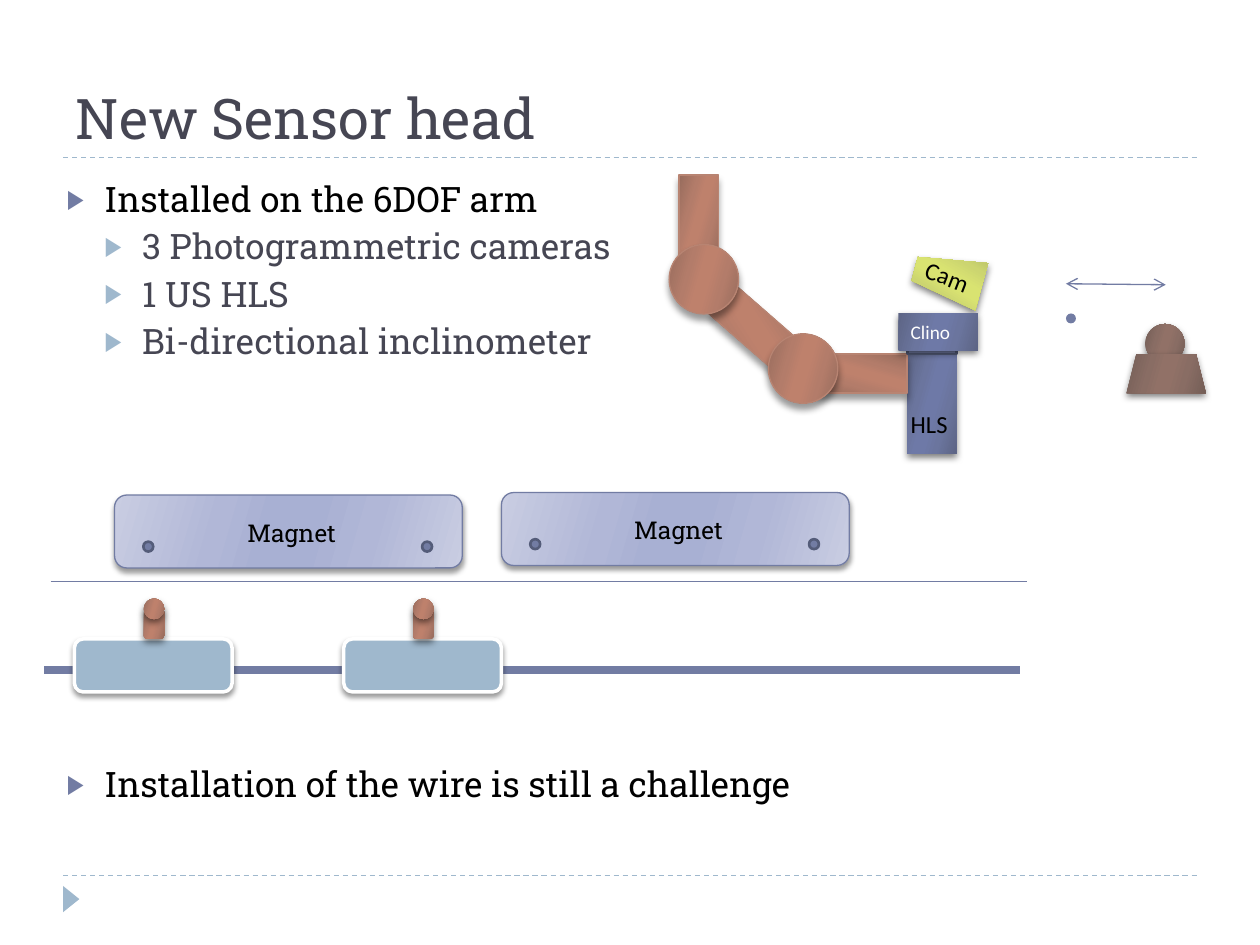
from lxml import etree
from pptx import Presentation
from pptx.dml.color import RGBColor
from pptx.enum.dml import MSO_LINE
from pptx.enum.shapes import MSO_CONNECTOR, MSO_SHAPE
from pptx.enum.text import MSO_ANCHOR, MSO_AUTO_SIZE, PP_ALIGN
from pptx.oxml.ns import qn
from pptx.util import Cm, Pt

RECT, ROUND = MSO_SHAPE.RECTANGLE, MSO_SHAPE.ROUNDED_RECTANGLE
OVAL, TRAPEZOID = MSO_SHAPE.OVAL, MSO_SHAPE.TRAPEZOID
TRIANGLE = MSO_SHAPE.ISOSCELES_TRIANGLE
STRAIGHT, DASH = MSO_CONNECTOR.STRAIGHT, MSO_LINE.DASH
LEFT, CENTER = PP_ALIGN.LEFT, PP_ALIGN.CENTER
TOP, BOTTOM, NO_FIT = MSO_ANCHOR.TOP, MSO_ANCHOR.BOTTOM, MSO_AUTO_SIZE.NONE

THEME = {
    "serif": "Roboto Slab", "sans": "Calibri",
    "title": 32, "body": 20, "label": 14, "small": 11,
    "blue": "727CA3", "navy": "545C79", "sky": "9FB8CD", "rust": "B88472",
    "ink": "464653", "black": "000000", "white": "FFFFFF",
}
GRADIENT_POSITIONS = (0, 30, 45, 55, 73, 100)
# Edge, middle and centre colours, mirrored along the gradient
GRADIENTS = {
    "magnet": ("C9CDE2", "B1B7D7", "A8B0D3"),
    "steel": ("5D6585", "6B759E", "6E79A7"),
    "copper": ("976C5D", "B37C6A", "BE816C"),
    "lime": ("ACB264", "CCD570", "D9E371"),
    "brown": ("745E57", "896D64", "917167"),
}
# Opacity in percent, blur and distance in points
SHADOWS = {"soft": (40, 3, 2), "deep": (40, 4, 3.4), "contact": (50, 4, 2)}

TITLE = "New Sensor head"
# Text, level, space before in points
BULLETS = [
    ("Installed on the 6DOF arm", 0, 6),
    ("3 Photogrammetric cameras", 1, 5),
    ("1 US HLS", 1, 5),
    ("Bi-directional inclinometer", 1, 5),
    ("Installation of the wire is still a challenge", 0, 231),
]
# Text colour, bullet colour
LEVELS = [("black", "blue"), ("ink", "sky")]

RULES = [17.65, 3.18]
# Start x, y, end x, width in points
TRACKS = [(0.89, 13.51, 20.57, 4.25), (1.02, 11.73, 20.7, 0.5)]

JOINT = {"fill": "copper", "line": ("rust", 0.75), "shadow": "deep"}
COPPER = {"fill": "copper", "shadow": "contact"}
STEEL = {"fill": "steel", "shadow": "contact"}
BROWN = {"fill": "brown", "shadow": "contact"}
TARGET = {"fill": "blue", "line": ("navy", 1.5)}

# Parts: preset (None for a label), left, top, width, height, look
MAGNET_ORIGINS = [(2.31, 9.98), (10.11, 9.93)]
MAGNET = [
    (ROUND, 0, 0, 7.01, 1.47, {"fill": "magnet", "line": ("blue", 0.75), "shadow": "soft"}),
    (OVAL, 0.58, 0.94, 0.2, 0.2, TARGET),
    (OVAL, 6.2, 0.94, 0.2, 0.2, TARGET),
    (None, 2.39, 0.33, 2.36, 0.86, {"text": "Magnet", "font": "serif", "align": CENTER}),
]
CART_ORIGINS = [(1.5, 12.88), (6.93, 12.88)]
CART = [
    (ROUND, 0, 0, 3.18, 1.07, {"fill": "sky", "line": ("white", 2), "shadow": "soft"}),
    (ROUND, 1.4, -0.61, 0.41, 0.61, COPPER),
    (OVAL, 1.4, -0.81, 0.41, 0.41, COPPER),
]
SENSOR_HEAD = [
    (RECT, 18.29, 7.14, 0.99, 2.01, STEEL),
    (RECT, 13.69, 3.53, 0.79, 1.8, JOINT),
    (RECT, 14.83, 5.72, 0.79, 1.8, {**JOINT, "rotation": 131.1}),
    (RECT, 16.99, 6.63, 0.79, 1.8, {**JOINT, "rotation": 90}),
    (OVAL, 15.49, 6.73, 1.4, 1.4, JOINT),
    (OVAL, 13.49, 4.93, 1.4, 1.4, JOINT),
    (RECT, 18.29, 6.53, 0.99, 0.61, TARGET),
    (TRAPEZOID, 18.62, 4.9, 0.99, 1.4, {"fill": "lime", "shadow": "contact", "rotation": 285.1}),
    (None, 18.11, 8.13, 1.6, 0.86, {"text": "HLS"}),
    (RECT, 18.11, 6.32, 1.6, 0.74, {**STEEL, "text": "Clino", "size": "small", "color": "white"}),
    (None, 18.39, 5.18, 1.6, 0.86, {"text": "Cam", "rotation": 21.4}),
    (OVAL, 23.09, 6.53, 0.79, 0.79, BROWN),
    (TRAPEZOID, 22.71, 7.14, 1.6, 0.79, BROWN),
    (OVAL, 21.49, 6.32, 0.2, 0.2, {"fill": "blue"}),
]
ARROW = (21.49, 5.72, 23.5, 5.74)


def color(name):
    return RGBColor.from_string(THEME[name])


def add_xml(parent, tag, **attributes):
    element = etree.SubElement(parent, qn(tag))
    for name, value in attributes.items():
        element.set(name, str(value))
    return element


def write(paragraph, text, font, size, ink):
    run = paragraph.add_run()
    run.text = text
    values = {"name": THEME[font], "size": Pt(THEME[size]), "bold": False}
    for name, value in values.items():
        setattr(run.font, name, value)
    run.font.color.rgb = color(ink)


def paint(shape, fill):
    if fill not in GRADIENTS:
        shape.fill.solid()
        shape.fill.fore_color.rgb = color(fill)
        return
    shape.fill.gradient()
    shape.fill.gradient_angle = 344
    stops = shape._element.spPr.find(".//" + qn("a:gsLst"))
    for stop in list(stops):
        stops.remove(stop)
    tones = GRADIENTS[fill]
    for position, tone in zip(GRADIENT_POSITIONS, tones + tones[::-1]):
        stop = add_xml(stops, "a:gs", pos=position * 1000)
        add_xml(stop, "a:srgbClr", val=tone)


def cast_shadow(shape, name):
    opacity, blur, distance = SHADOWS[name]
    effects = shape._element.spPr.find(qn("a:effectLst"))
    outer = add_xml(effects, "a:outerShdw", blurRad=Pt(blur), dist=Pt(distance),
                    dir=5400000, rotWithShape=0)
    tone = add_xml(outer, "a:srgbClr", val=THEME["black"])
    add_xml(tone, "a:alpha", val=opacity * 1000)


def add_part(shapes, preset, left, top, width, height, look):
    box = [Cm(value) for value in (left, top, width, height)]
    if preset is None:
        shape = shapes.add_textbox(*box)
    else:
        shape = shapes.add_shape(preset, *box)
        shape.shadow.inherit = False
        paint(shape, look["fill"])
        if "line" in look:
            line_color, width_points = look["line"]
            shape.line.color.rgb = color(line_color)
            shape.line.width = Pt(width_points)
        else:
            shape.line.fill.background()
        if "shadow" in look:
            cast_shadow(shape, look["shadow"])
    shape.rotation = look.get("rotation", 0)
    if "text" in look:
        shape.text_frame.word_wrap = True
        paragraph = shape.text_frame.paragraphs[0]
        paragraph.alignment = look.get("align", LEFT)
        write(paragraph, look["text"], look.get("font", "sans"),
              look.get("size", "label"), look.get("color", "black"))


def add_group(slide, parts, origin=(0, 0)):
    group = slide.shapes.add_group_shape()
    for preset, left, top, width, height, look in parts:
        add_part(group.shapes, preset, origin[0] + left, origin[1] + top, width, height, look)
    return group


def add_line(shapes, ends, ink, width):
    line = shapes.add_connector(STRAIGHT, *[Cm(value) for value in ends])
    line.line.color.rgb = color(ink)
    line.line.width = Pt(width)
    add_xml(line._element.spPr, "a:effectLst")
    return line


def place(placeholder, box, anchor):
    for name, value in zip(("left", "top", "width", "height"), box):
        setattr(placeholder, name, Cm(value))
    frame = placeholder.text_frame
    for name, value in {"vertical_anchor": anchor, "auto_size": NO_FIT, "word_wrap": True}.items():
        setattr(frame, name, value)
    return frame


def add_bullets(frame):
    for index, (text, level, space) in enumerate(BULLETS):
        paragraph = frame.add_paragraph() if index else frame.paragraphs[0]
        values = {"level": level, "space_before": Pt(space), "line_spacing": 0.92}
        for name, value in values.items():
            setattr(paragraph, name, value)
        ink, bullet = LEVELS[level]
        write(paragraph, text, "serif", "body", ink)
        properties = paragraph._p.get_or_add_pPr()
        properties.set("marL", str(Cm(0.76 * (level + 1))))
        properties.set("indent", str(-Cm(0.76)))
        add_xml(add_xml(properties, "a:buClr"), "a:srgbClr", val=THEME[bullet])
        add_xml(properties, "a:buSzPct", val=76000)
        add_xml(properties, "a:buChar", char="▶")


def main():
    presentation = Presentation()
    presentation.slide_width, presentation.slide_height = Cm(25.4), Cm(19.05)
    slide = presentation.slides.add_slide(presentation.slide_layouts[1])
    title, body = slide.placeholders

    heading = place(title, (1.27, 0.43, 22.86, 2.74), BOTTOM).paragraphs[0]
    heading.alignment = LEFT
    write(heading, TITLE, "serif", "title", "ink")
    add_bullets(place(body, (1.09, 3.53, 22, 14.4), TOP))

    for y in RULES:
        add_line(slide.shapes, (1.27, y, 24.13, y), "sky", 0.75).line.dash_style = DASH
    add_part(slide.shapes, TRIANGLE, 1.17, 17.96, 0.53, 0.33, {"fill": "sky", "rotation": 90})
    for start, y, end, width in TRACKS:
        add_line(slide.shapes, (start, y, end, y), "blue", width)

    for parts, origins in ((MAGNET, MAGNET_ORIGINS), (CART, CART_ORIGINS)):
        for origin in origins:
            add_group(slide, parts, origin)
    sensor_head = add_group(slide, SENSOR_HEAD)
    arrow = add_line(sensor_head.shapes, ARROW, "blue", 0.75)
    for end in ("a:headEnd", "a:tailEnd"):
        add_xml(arrow.line._get_or_add_ln(), end, type="arrow")
    presentation.save("out.pptx")


if __name__ == "__main__":
    main()
